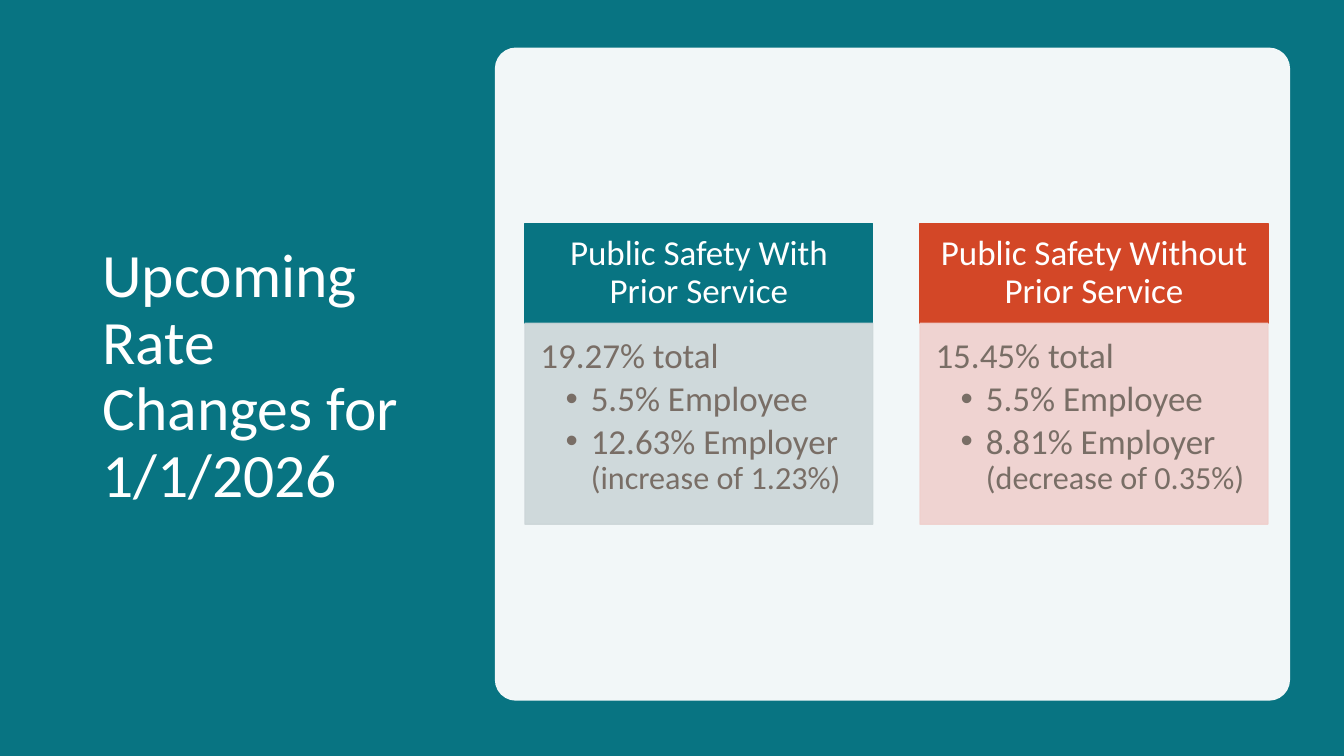
from lxml.etree import SubElement
from pptx import Presentation
from pptx.dml.color import RGBColor
from pptx.enum.shapes import MSO_SHAPE
from pptx.enum.text import MSO_ANCHOR, PP_ALIGN
from pptx.oxml.ns import qn
from pptx.util import Pt

WHITE = RGBColor(0xFF, 0xFF, 0xFF)
TEAL = RGBColor(0x08, 0x74, 0x82)
ORANGE = RGBColor(0xD3, 0x47, 0x27)
PALE_TEAL = RGBColor(0xCC, 0xD6, 0xD8)
PALE_ORANGE = RGBColor(0xEF, 0xD0, 0xCD)
BROWN = RGBColor(0x79, 0x6E, 0x66)

COLUMN_LEFT, COLUMN_STEP, COLUMN_WIDTH = 375, 282.25, 248.4
HEADER_TOP, HEADER_HEIGHT, DETAIL_HEIGHT = 159.5, 71.5, 143.5

RATES = [
    ("Public Safety With Prior Service", TEAL, PALE_TEAL,
     "19.27% total", "12.63% Employer ", "(increase of 1.23%)"),
    ("Public Safety Without Prior Service", ORANGE, PALE_ORANGE,
     "15.45% total", "8.81% Employer ", "(decrease of 0.35%)"),
]


class RateSlide:
    """Holds the text style and the slide, and draws each kind of element."""

    font_name = "Calibri"
    text_size = 25
    note_size = 23

    def __init__(self, presentation):
        self.slide = presentation.slides.add_slide(presentation.slide_layouts[5])
        self.slide.background.fill.solid()
        self.slide.background.fill.fore_color.rgb = TEAL

    def style_run(self, run, size, color):
        run.font.name = self.font_name
        run.font.size = Pt(size)
        run.font.color.rgb = color

    def set_margins(self, frame, left, top, right, bottom):
        frame.margin_left, frame.margin_top = Pt(left), Pt(top)
        frame.margin_right, frame.margin_bottom = Pt(right), Pt(bottom)
        frame.word_wrap = True

    def title(self, text, left, top, width, height):
        title = self.slide.shapes.title
        title.left, title.top = Pt(left), Pt(top)
        title.width, title.height = Pt(width), Pt(height)
        frame = title.text_frame
        frame.text = text
        frame.word_wrap = True
        frame.vertical_anchor = MSO_ANCHOR.MIDDLE
        paragraph = frame.paragraphs[0]
        paragraph.alignment = PP_ALIGN.LEFT
        paragraph.line_spacing = 0.9
        self.style_run(paragraph.runs[0], 44, WHITE)

    def block(self, kind, left, top, width, height, color, opacity=100, outlined=True):
        block = self.slide.shapes.add_shape(
            kind, Pt(left), Pt(top), Pt(width), Pt(height))
        block.shadow.inherit = False
        block.fill.solid()
        block.fill.fore_color.rgb = color
        if outlined:
            block.line.color.rgb = color
            block.line.width = Pt(1)
        else:
            block.line.fill.background()
        if opacity < 100:
            for tint in block.element.spPr.findall(".//" + qn("a:srgbClr")):
                SubElement(tint, qn("a:alpha"), val=str(opacity * 1000))
        return block

    def panel(self, left, top, width, height):
        panel = self.block(MSO_SHAPE.ROUNDED_RECTANGLE, left, top, width, height,
                           WHITE, 95, outlined=False)
        panel.adjustments[0] = 0.032

    def header(self, text, left, color):
        header = self.block(MSO_SHAPE.RECTANGLE, left, HEADER_TOP,
                            COLUMN_WIDTH, HEADER_HEIGHT, color)
        frame = header.text_frame
        self.set_margins(frame, 14, 8, 14, 8)
        frame.text = text
        frame.vertical_anchor = MSO_ANCHOR.MIDDLE
        paragraph = frame.paragraphs[0]
        paragraph.alignment = PP_ALIGN.CENTER
        paragraph.line_spacing = 0.9
        self.style_run(paragraph.runs[0], self.text_size, WHITE)

    def details(self, total, employer, change, left, color):
        details = self.block(MSO_SHAPE.RECTANGLE, left, HEADER_TOP + HEADER_HEIGHT,
                             COLUMN_WIDTH, DETAIL_HEIGHT, color, 90)
        frame = details.text_frame
        self.set_margins(frame, 11, 11, 13.5, 16)
        frame.text = "\n".join([total, "5.5% Employee", employer])
        frame.vertical_anchor = MSO_ANCHOR.TOP
        for position, paragraph in enumerate(frame.paragraphs):
            if position:
                self.bullet(paragraph)
            paragraph.alignment = PP_ALIGN.LEFT
            paragraph.line_spacing = 0.9
            paragraph.space_after = Pt(3.5)
            self.style_run(paragraph.runs[0], self.text_size, BROWN)
        note = frame.paragraphs[-1].add_run()
        note.text = change
        self.style_run(note, self.note_size, BROWN)

    def bullet(self, paragraph):
        properties = paragraph._p.get_or_add_pPr()
        properties.set("marL", str(Pt(36)))
        properties.set("indent", str(Pt(-18)))
        SubElement(properties, qn("a:buFont"), typeface="Arial")
        SubElement(properties, qn("a:buChar"), char="•")
        paragraph.level = 1


def main():
    presentation = Presentation()
    presentation.slide_width, presentation.slide_height = Pt(960), Pt(540)
    rates = RateSlide(presentation)
    rates.title("Upcoming Rate Changes for 1/1/2026", 66, 50.5, 232.5, 438.5)
    rates.panel(353.5, 34, 568, 466.5)
    for column, (group, strong, pale, total, employer, change) in enumerate(RATES):
        left = COLUMN_LEFT + column * COLUMN_STEP
        rates.header(group, left, strong)
        rates.details(total, employer, change, left, pale)
    presentation.save("out.pptx")


if __name__ == "__main__":
    main()
